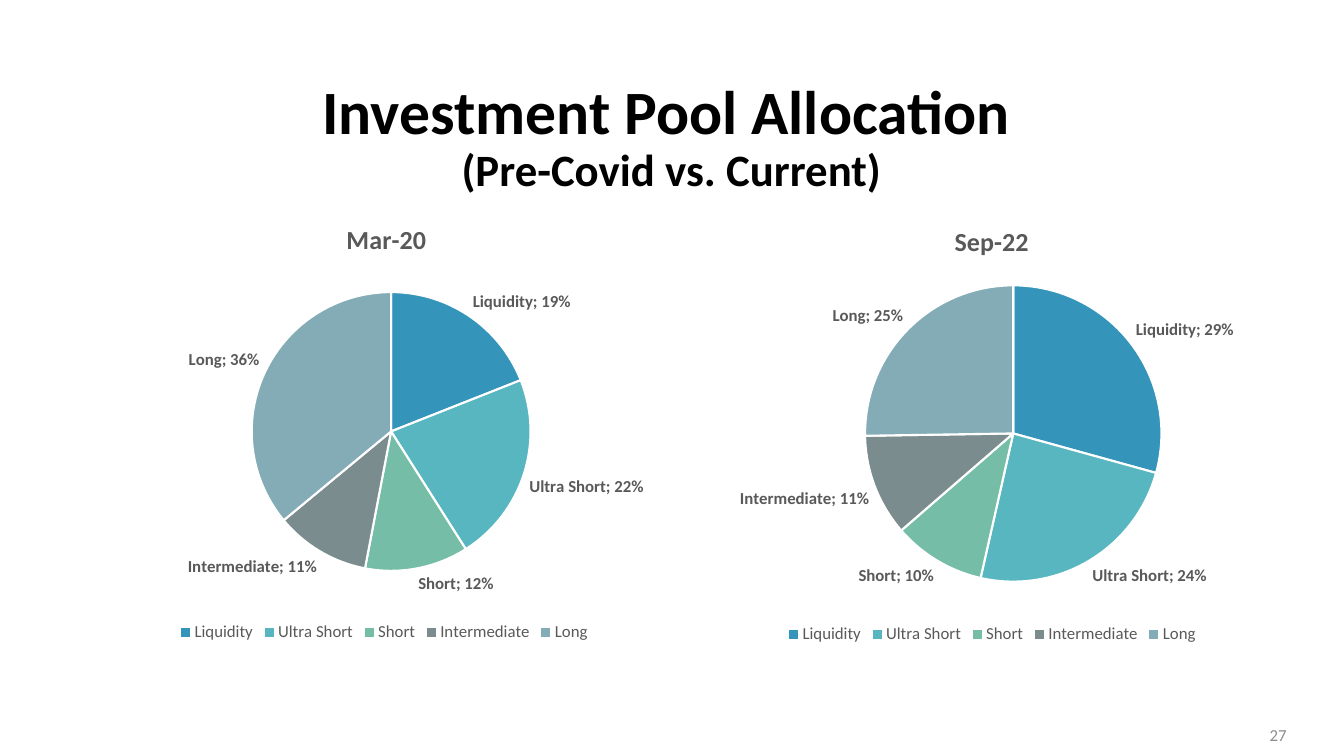
from lxml.etree import Element, SubElement
from pptx import Presentation
from pptx.chart.data import CategoryChartData
from pptx.dml.color import RGBColor
from pptx.enum.chart import XL_CHART_TYPE, XL_LABEL_POSITION, XL_LEGEND_POSITION
from pptx.enum.text import MSO_ANCHOR, PP_ALIGN
from pptx.oxml.ns import qn
from pptx.util import Pt

EMU_PER_PX = 9144
CATEGORIES = ["Liquidity", "Ultra Short", "Short", "Intermediate", "Long"]


def px(*lengths):
    return [length * EMU_PER_PX for length in lengths]


def color(value):
    return RGBColor.from_string(value)


def set_layout(element, **fractions):
    for existing in element.findall(qn("c:layout")):
        element.remove(existing)
    layout = SubElement(element, qn("c:layout"))
    manual = SubElement(layout, qn("c:manualLayout"))
    if "w" in fractions:
        SubElement(manual, qn("c:layoutTarget")).set("val", "inner")
    for axis in ("x", "y"):
        SubElement(manual, qn(f"c:{axis}Mode")).set("val", "edge")
    for name, fraction in fractions.items():
        SubElement(manual, qn(f"c:{name}")).set("val", str(fraction))
    return layout


class AllocationSlide:
    font_name = "Calibri"
    muted = "595959"
    slices = ["3494BA", "58B6C0", "75BDA7", "7A8C8E", "84ACB6"]

    def __init__(self, presentation):
        self.slide = presentation.slides.add_slide(presentation.slide_layouts[6])

    def style(self, font, size, fill, bold=False):
        font.name = self.font_name
        font.size = Pt(size)
        font.bold = bold
        font.color.rgb = color(fill)

    def text(self, box, lines, sizes, fill="000000", bold=False,
             align=PP_ALIGN.LEFT, spacing=1.0):
        frame = self.slide.shapes.add_textbox(*px(*box)).text_frame
        frame.word_wrap = True
        frame.vertical_anchor = MSO_ANCHOR.MIDDLE
        paragraph = frame.paragraphs[0]
        paragraph.alignment = align
        paragraph.line_spacing = spacing
        for index, (line, size) in enumerate(zip(lines, sizes)):
            if index:
                paragraph.add_line_break()
            run = paragraph.add_run()
            run.text = line
            self.style(run.font, size, fill, bold)

    def pie(self, box, title, values, title_place, plot):
        data = CategoryChartData()
        data.categories = CATEGORIES
        data.add_series("Series 1", values)
        chart = self.slide.shapes.add_chart(XL_CHART_TYPE.PIE, *px(*box), data).chart
        self.style(chart.font, 10, "000000")

        chart.has_title = True
        chart_title = chart.chart_title
        chart_title.text_frame.text = title
        self.style(chart_title.text_frame.paragraphs[0].runs[0].font, 18.6, self.muted, True)
        title_element = chart_title._element
        title_layout = set_layout(title_element, **title_place)
        title_element.find(qn("c:tx")).addnext(title_layout)

        chart.has_legend = True
        chart.legend.position = XL_LEGEND_POSITION.BOTTOM
        chart.legend.include_in_layout = False
        self.style(chart.legend.font, 12, self.muted)

        pie = chart.plots[0]
        pie.vary_by_categories = True
        for index, fill in enumerate(self.slices):
            point = pie.series[0].points[index]
            point.format.fill.solid()
            point.format.fill.fore_color.rgb = color(fill)
            point.format.line.color.rgb = color("FFFFFF")
            point.format.line.width = Pt(1.5)

        pie.has_data_labels = True
        labels = pie.data_labels
        labels.show_category_name = True
        labels.show_percentage = True
        labels.show_value = False
        labels.number_format = "0%"
        labels.number_format_is_linked = False
        labels.position = XL_LABEL_POSITION.OUTSIDE_END
        self.style(labels.font, 12, self.muted, True)
        separator = Element(qn("c:separator"))
        separator.text = "; "
        labels_element = labels._element
        last_flag = labels_element.find(qn("c:showBubbleSize"))
        if last_flag is None:
            last_flag = labels_element.find(qn("c:showPercent"))
        last_flag.addnext(separator)

        plot_area = chart._chartSpace.chart.plotArea
        plot_area.insert(0, set_layout(plot_area, **plot))


def main():
    presentation = Presentation()
    presentation.slide_width, presentation.slide_height = px(1333, 750)
    page = AllocationSlide(presentation)
    page.text((986, 709, 300, 40), ["27"], [12], fill="8C8C8C", align=PP_ALIGN.RIGHT)
    page.pie((31, 202, 700, 439), "Mar-20", [19, 22, 12, 11, 36],
             {"x": 0.44, "y": 0.03},
             {"x": 0.31, "y": 0.2, "w": 0.4, "h": 0.63})
    page.pie((634, 204, 700, 439), "Sep-22", [29, 24, 10, 11, 25],
             {"x": 0.44, "y": 0.03},
             {"x": 0.32, "y": 0.18, "w": 0.42, "h": 0.67})
    page.text((65, 75, 1192, 125),
              ["Investment Pool Allocation", " (Pre-Covid vs. Current)"], [44, 32],
              bold=True, align=PP_ALIGN.CENTER, spacing=0.9)
    presentation.save("out.pptx")


if __name__ == "__main__":
    main()
